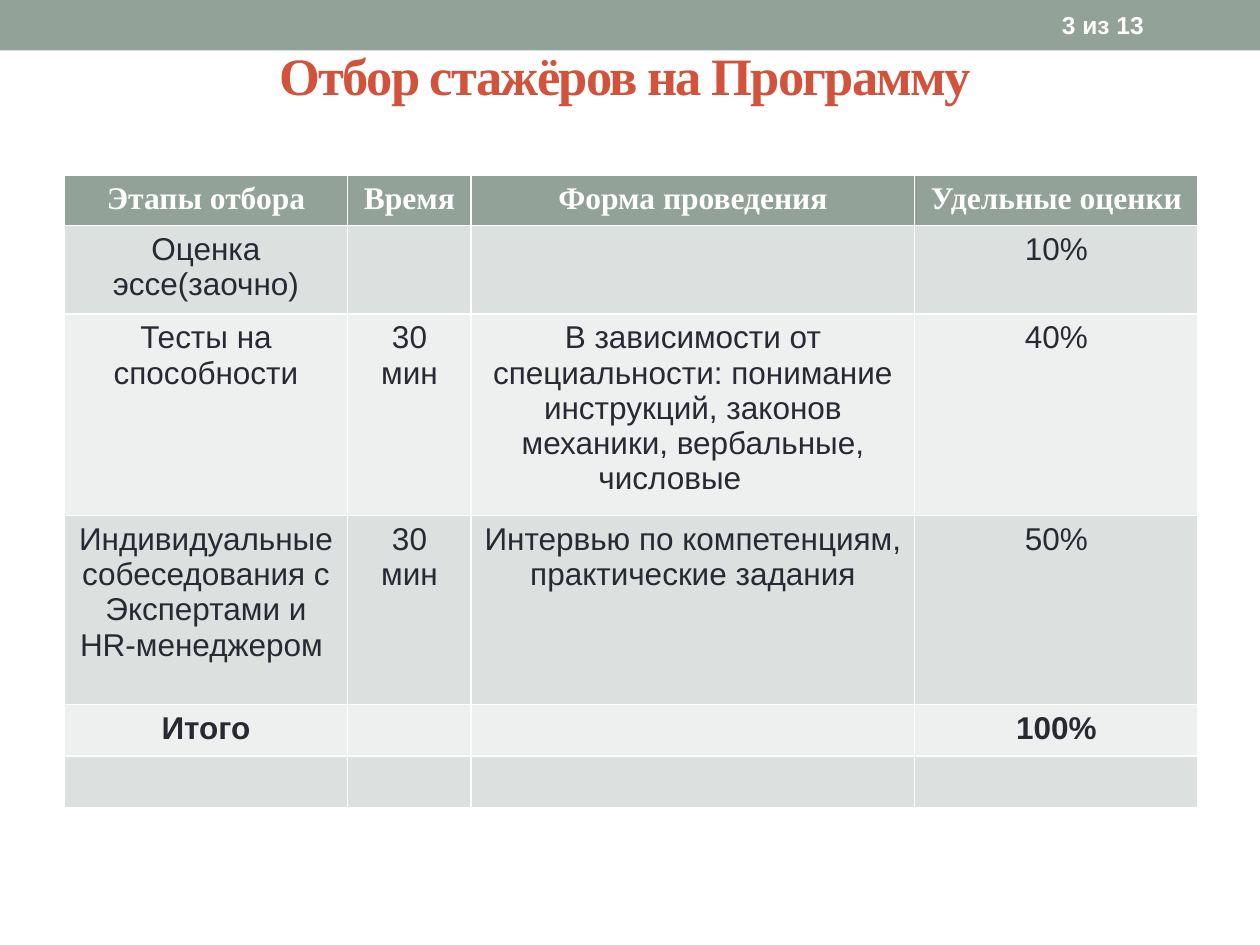
"""Build the slide about selecting trainees, with a table of selection stages."""
from pptx import Presentation
from pptx.dml.color import RGBColor
from pptx.enum.shapes import MSO_SHAPE as Shape
from pptx.enum.text import MSO_ANCHOR as Anchor, PP_ALIGN as Align
from pptx.util import Inches, Pt

SAGE = RGBColor(0x93, 0xA2, 0x99)
BAND_DARK = RGBColor(0xDC, 0xE0, 0xDE)
BAND_LIGHT = RGBColor(0xEE, 0xF0, 0xEF)
RUST = RGBColor(0xD2, 0x53, 0x3C)
INK = RGBColor(0x29, 0x29, 0x34)
WHITE = RGBColor(0xFF, 0xFF, 0xFF)

COLUMN_WIDTHS = [2.25, 0.98, 3.52, 2.25]
ROW_HEIGHTS = [0.4, 0.66, 1.5, 1.5, 0.41, 0.41]
ROWS = [
    ["Этапы отбора", "Время", "Форма проведения", "Удельные оценки"],
    ["Оценка эссе(заочно)", "", "", "10%"],
    ["Тесты на способности", "30 мин",
     "В зависимости от специальности: понимание инструкций, законов "
     "механики, вербальные, числовые \t", "40%"],
    ["Индивидуальные собеседования с Экспертами и HR-менеджером \t", "30 мин",
     "Интервью по компетенциям, практические задания", "50%"],
    ["Итого", "", "", "100%"],
    ["", "", "", ""],
]
HEADER_ROW, TOTAL_ROW = 0, 4


def write(paragraph, text, color, align, **font_format):
    paragraph.alignment = align
    run = paragraph.add_run()
    run.text = text
    run.font.color.rgb = color
    for name, value in font_format.items():
        setattr(run.font, name, value)
    return run


def add_label(shapes, box, text, color, align, **font_format):
    frame = shapes.add_textbox(*map(Inches, box)).text_frame
    frame.word_wrap = True
    frame.vertical_anchor = Anchor.MIDDLE
    return write(frame.paragraphs[0], text, color, align, **font_format)


presentation = Presentation()
presentation.slide_width, presentation.slide_height = Inches(10), Inches(7.5)
slide = presentation.slides.add_slide(presentation.slide_layouts[6])

bar = slide.shapes.add_shape(Shape.RECTANGLE, 0, 0, presentation.slide_width, Inches(0.4))
bar.shadow.inherit = False
bar.fill.solid()
bar.fill.fore_color.rgb = SAGE
bar.line.fill.background()

title = add_label(slide.shapes, (0.51, 0.29, 9, 0.61), "Отбор стажёров на Программу ",
                  RUST, Align.CENTER, name="Times New Roman", size=Pt(30), bold=True)
title.font._element.set("spc", "-100")

table = slide.shapes.add_table(
    len(ROWS), len(COLUMN_WIDTHS), Inches(0.51), Inches(1.39),
    Inches(sum(COLUMN_WIDTHS)), Inches(sum(ROW_HEIGHTS))).table
for column, width in zip(table.columns, COLUMN_WIDTHS):
    column.width = Inches(width)

for row_index, (row, height, texts) in enumerate(zip(table.rows, ROW_HEIGHTS, ROWS)):
    row.height = Inches(height)
    is_header = row_index == HEADER_ROW
    band = BAND_DARK if row_index % 2 else BAND_LIGHT
    for cell, text in zip(row.cells, texts):
        cell.fill.solid()
        cell.fill.fore_color.rgb = SAGE if is_header else band
        if text:
            write(cell.text_frame.paragraphs[0], text, WHITE if is_header else INK,
                  Align.CENTER, name="Times New Roman" if is_header else "Arial",
                  size=Pt(18), bold=row_index in (HEADER_ROW, TOTAL_ROW))

add_label(slide.shapes, (8.33, 0.02, 1.17, 0.36), "3 из 13", WHITE, Align.LEFT,
          name="Arial", size=Pt(14), bold=True)

presentation.save("out.pptx")
